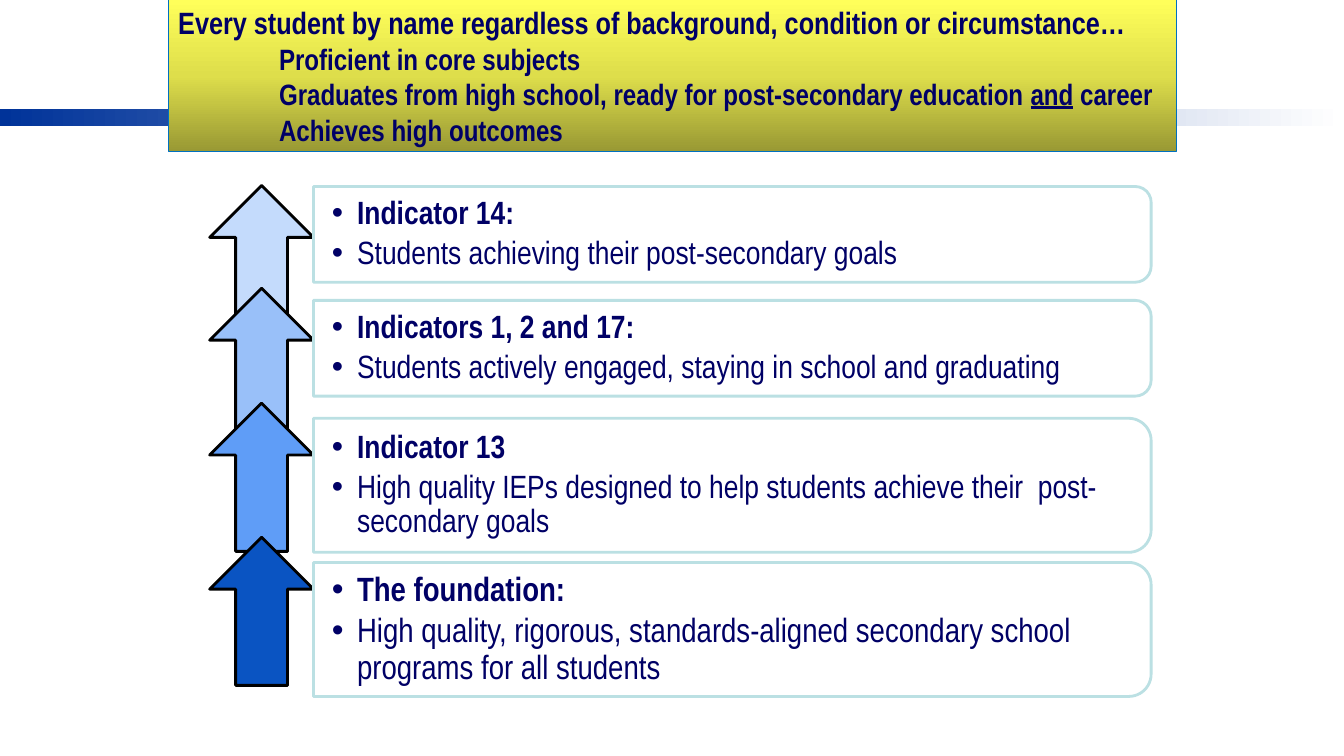
from copy import deepcopy

from lxml import etree
from pptx import Presentation
from pptx.dml.color import RGBColor
from pptx.enum.shapes import MSO_SHAPE
from pptx.enum.text import MSO_ANCHOR, PP_ALIGN
from pptx.oxml.ns import qn
from pptx.util import Pt

RECT = MSO_SHAPE.RECTANGLE
ARROW = MSO_SHAPE.LEFT_ARROW
ROUND = MSO_SHAPE.ROUND_2_SAME_RECTANGLE
MIDDLE = MSO_ANCHOR.MIDDLE
LEFT = PP_ALIGN.LEFT

WHITE = RGBColor(0xFF, 0xFF, 0xFF)
BLACK = RGBColor(0x00, 0x00, 0x00)
NAVY = RGBColor(0x00, 0x00, 0x66)
ROYAL = RGBColor(0x00, 0x33, 0x99)
BLUE = RGBColor(0x00, 0x70, 0xC0)
AQUA = RGBColor(0xBB, 0xE0, 0xE3)
OLIVE = RGBColor(0x99, 0x99, 0x34)
GOLD = RGBColor(0xDE, 0xDE, 0x4B)
YELLOW = RGBColor(0xFF, 0xFF, 0x5A)
PALE = RGBColor(0xC4, 0xDB, 0xFC)
LIGHT = RGBColor(0x99, 0xC0, 0xF9)
MID = RGBColor(0x5F, 0x9D, 0xF7)
DEEP = RGBColor(0x0A, 0x54, 0xC2)

FONT = "Arial Narrow"
BOX_X, BOX_W = 223.92, 598.32
ARROW_X, ARROW_W, ARROW_H = 133.92, 105.84, 74.16
HEAD = [
    (22, 0, ["Every student by name regardless of background, condition or circumstance…"]),
    (21, 72, ["Proficient in core subjects"]),
    (21, 72, ["Graduates from high school, ready for post-secondary education ", "and", " career"]),
    (21, 72, ["Achieves high outcomes"]),
]
STEPS = [
    (148.32, PALE, 133.2, 68.4, 23, "Indicator 14:",
     "Students achieving their post-secondary goals"),
    (221.76, LIGHT, 214.56, 68.4, 23, "Indicators 1, 2 and 17:",
     "Students actively engaged, staying in school and graduating"),
    (303.84, MID, 298.8, 95.76, 23, "Indicator 13",
     "High quality IEPs designed to help students achieve their  post-secondary goals"),
    (399.6, DEEP, 401.76, 95.76, 24, "The foundation:",
     "High quality, rigorous, standards-aligned secondary school programs for all students"),
]


def apply(target, style):
    """Set each attribute named in the style."""
    for name, value in style.items():
        setattr(target, name, value)


def add_shape(slide, kind, place, line=None, width=0):
    """Add a shape without shadow and with the given outline."""
    shape = slide.shapes.add_shape(kind, *map(Pt, place))
    shape.shadow.inherit = False
    if line is None:
        shape.line.fill.background()
    else:
        shape.line.color.rgb = line
        shape.line.width = Pt(width)
    return shape


def add_blend(shape, angle, colors):
    """Fill a shape with evenly spaced gradient colours."""
    shape.fill.gradient()
    shape.fill.gradient_angle = angle
    stops = shape._element.spPr.find(".//" + qn("a:gsLst"))
    for _ in colors[2:]:
        stops.insert(1, deepcopy(stops[0]))
    for i, (stop, color) in enumerate(zip(shape.fill.gradient_stops, colors)):
        stop.color.rgb = color
        stop.position = i / (len(colors) - 1)


def set_frame(frame, left, top, right):
    """Set wrapping, anchor and margins of a text frame."""
    apply(frame, {"word_wrap": True, "vertical_anchor": MIDDLE,
                  "margin_left": Pt(left), "margin_right": Pt(right),
                  "margin_top": Pt(top), "margin_bottom": Pt(top)})


def add_para(frame, index, style):
    """Return the styled paragraph at the index."""
    para = frame.add_paragraph() if index else frame.paragraphs[0]
    apply(para, {"alignment": LEFT, **style})
    return para


def add_run(para, text, size, **style):
    """Add a run of navy text."""
    run = para.add_run()
    run.text = text
    apply(run.font, {"name": FONT, "size": Pt(size), **style})
    run.font.color.rgb = NAVY


def add_bullet(para):
    """Give a paragraph a hanging round bullet."""
    props = para._p.get_or_add_pPr()
    props.set("marL", str(Pt(18)))
    props.set("indent", str(-Pt(18)))
    color = etree.SubElement(props, qn("a:buClr"))
    etree.SubElement(color, qn("a:srgbClr"), val=str(NAVY))
    etree.SubElement(props, qn("a:buFont"), typeface="Arial")
    etree.SubElement(props, qn("a:buChar"), char="•")


def add_title(slide):
    """Add the yellow heading panel."""
    panel = add_shape(slide, RECT, (120.24, 0, 720, 108), BLUE, 0.75)
    add_blend(panel, 90, [OLIVE, GOLD, YELLOW])
    frame = panel.text_frame
    set_frame(frame, 7.2, 3.6, 7.2)
    for i, (size, indent, parts) in enumerate(HEAD):
        para = add_para(frame, i, {})
        para._p.get_or_add_pPr().set("marL", str(Pt(indent)))
        for part in parts:
            add_run(para, part, size, bold=True, underline=part == "and")


def add_arrow(slide, top, color):
    """Add an arrow that points up."""
    arrow = add_shape(slide, ARROW, (ARROW_X, top, ARROW_W, ARROW_H), BLACK, 2)
    arrow.rotation = 90
    arrow.fill.solid()
    arrow.fill.fore_color.rgb = color


def add_box(slide, top, height):
    """Add an outlined box with rounded right corners."""
    shift = (BOX_W - height) / 2
    box = add_shape(slide, ROUND, (BOX_X + shift, top - shift, height, BOX_W), AQUA, 2)
    box.rotation = 90
    box.adjustments[0] = 0.167
    box.fill.solid()
    box.fill.fore_color.rgb = WHITE
    tint = box._element.spPr.find(qn("a:solidFill"))[0]
    etree.SubElement(tint, qn("a:alpha"), val="90000")


def add_label(slide, top, height, size, lines):
    """Add a bold bullet and a plain bullet centred on a box."""
    inset = height * 0.05
    place = (BOX_X, top + inset, BOX_W - inset, height - 2 * inset)
    frame = slide.shapes.add_textbox(*map(Pt, place)).text_frame
    set_frame(frame, 13.2, 1.44, 1.44)
    for i, text in enumerate(lines):
        para = add_para(frame, i, {"level": 1, "line_spacing": 0.9,
                                   "space_before": Pt(3.5 * i)})
        add_bullet(para)
        add_run(para, text, size, bold=i == 0)


def main():
    """Build the slide and save it."""
    deck = Presentation()
    apply(deck, {"slide_width": Pt(960), "slide_height": Pt(540)})
    slide = deck.slides.add_slide(deck.slide_layouts[6])
    strip = add_shape(slide, RECT, (0, 77.76, 960, 12.24))
    add_blend(strip, 0, [ROYAL, WHITE])
    add_title(slide)
    for tip, color, top, height, size, *lines in STEPS:
        add_arrow(slide, tip, color)
        add_box(slide, top, height)
        add_label(slide, top, height, size, lines)
    deck.save("out.pptx")


if __name__ == "__main__":
    main()
